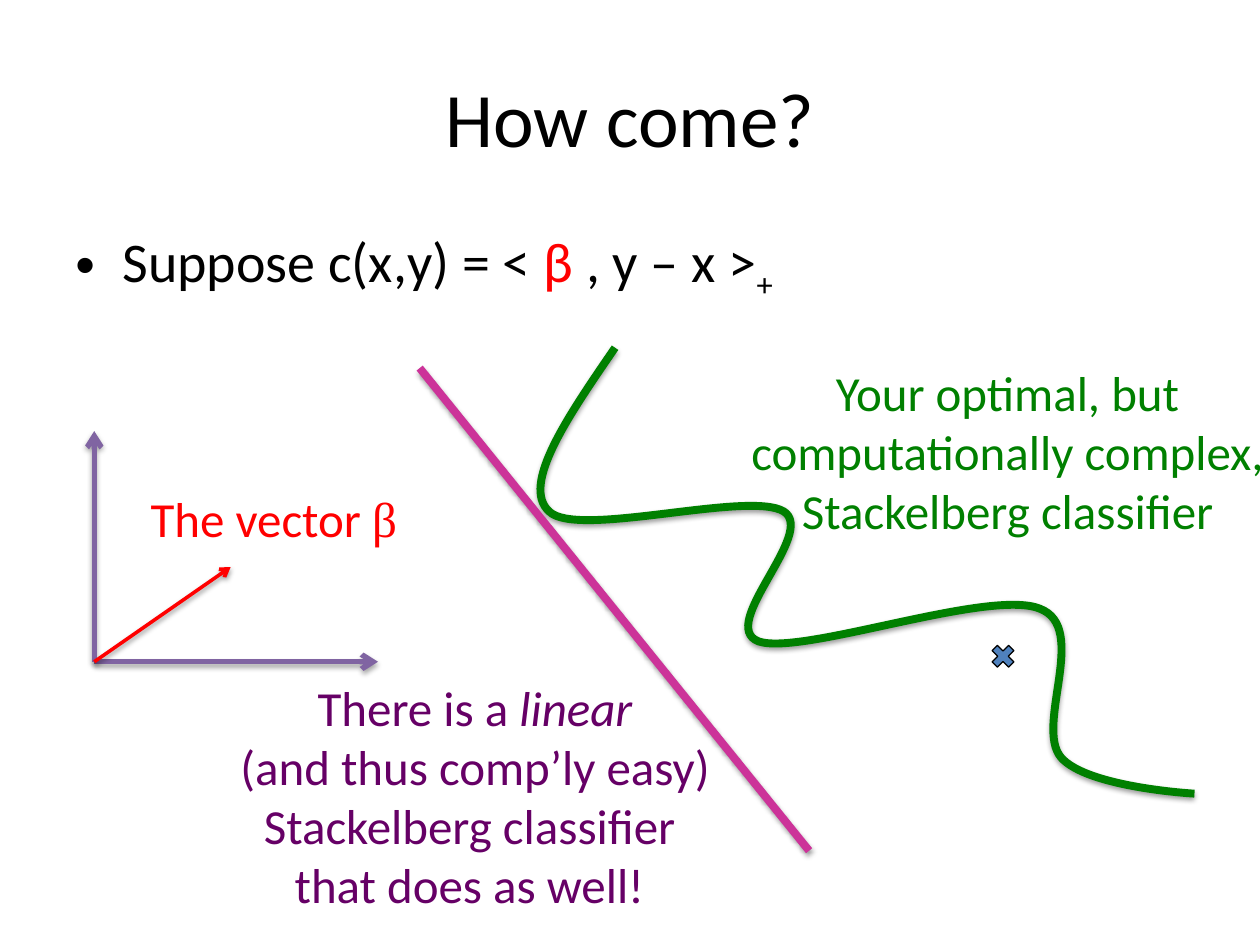
import lxml.etree
import pptx
import pptx.dml.color
import pptx.enum.shapes
import pptx.enum.text
import pptx.oxml
import pptx.oxml.ns
import pptx.util

Cm, Pt = pptx.util.Cm, pptx.util.Pt
qn = pptx.oxml.ns.qn
ALIGN = pptx.enum.text.PP_ALIGN
ANCHOR = pptx.enum.text.MSO_ANCHOR

COLORS = {"black": "000000", "red": "FF0000", "green": "008000", "axis": "8064A2",
          "pink": "CC3399", "purple": "660066", "blue": "4F81BD"}

# Content: a text is a list of paragraphs, a paragraph a list of (text, changes)
TITLE = [[("How come?", {})]]
COST = [[("Suppose c(x,y) = < ", {}), ("β", {"color": "red"}), (" , y – x >", {}),
         ("+", {"baseline": -25})]]

# Captions: left, top, width, height in cm, colour, paragraphs
CAPTIONS = [
    (2.74, 9.73, 5.56, 1.45, "red",
     [[("The vector ", {}), ("β", {"font": "Times New Roman"})]]),
    (14.81, 7.19, 11, 3.84, "green",
     [[("Your optimal, but", {})], [("computationally complex,", {})],
      [("Stackelberg classifier", {})]]),
    (4.52, 13.54, 10.11, 5.05, "purple",
     [[("There is a ", {}), ("linear", {"italic": True})],
      [("(and thus comp’ly easy)", {})],
      [("Stackelberg classifier ", {})], [("that does as well! ", {})]]),
]

# Lines: start, end in cm, colour, width in points, arrowhead, shadow
AXIS_SHADOW = {"opacity": 35, "distance": 1.8}
LINE_SHADOW = {"opacity": 38, "distance": 1.6}
ORIGIN = (1.9, 13.34)
LINES = [
    (ORIGIN, (7.62, 13.34), "axis", 3, True, AXIS_SHADOW),
    (ORIGIN, (1.9, 8.69), "axis", 3, True, AXIS_SHADOW),
    (ORIGIN, (4.65, 11.43), "red", 2, True, LINE_SHADOW),
    ((8.46, 7.42), (16.31, 17.15), "pink", 4.5, False, LINE_SHADOW),
]

# Complex classifier: start, then two control points and an end per bend
CURVE_START = (12.4, 7.01)
CURVE_BENDS = [
    ((11.46, 8.38), (10.49, 9.78), (11.07, 10.31)),
    ((11.63, 10.87), (15.09, 9.88), (15.8, 10.31)),
    ((16.48, 10.74), (14.45, 12.6), (15.29, 12.93)),
    ((16.15, 13.23), (19.94, 11.86), (20.96, 12.27)),
    ((21.97, 12.65), (20.85, 14.63), (21.39, 15.27)),
    ((21.92, 15.88), (24.08, 16), (24.08, 16)),
]


def rgb(name):
    return pptx.dml.color.RGBColor.from_string(COLORS[name])


def write(frame, paragraphs, size, color, align):
    for index, runs in enumerate(paragraphs):
        paragraph = frame.add_paragraph() if index else frame.paragraphs[0]
        paragraph.alignment = align
        for text, changes in runs:
            run = paragraph.add_run()
            run.text = text
            run.font.size = Pt(size)
            run.font.name = changes.get("font", "Calibri")
            run.font.color.rgb = rgb(changes.get("color", color))
            if "italic" in changes:
                run.font.italic = changes["italic"]
            if "baseline" in changes:
                run.font._element.set("baseline", str(changes["baseline"] * 1000))


def add_shadow(shape, opacity, distance):
    effects = lxml.etree.SubElement(shape._element.spPr, qn("a:effectLst"))
    shadow = lxml.etree.SubElement(effects, qn("a:outerShdw"), blurRad=str(Pt(3.1)),
                                   dist=str(Pt(distance)), dir="5400000", rotWithShape="0")
    shade = lxml.etree.SubElement(shadow, qn("a:srgbClr"), val=COLORS["black"])
    lxml.etree.SubElement(shade, qn("a:alpha"), val=str(opacity * 1000))


def stroke(shape, color, width):
    shape.line.color.rgb = rgb(color)
    shape.line.width = Pt(width)


def add_line(start, end, color, width, arrow, shadow):
    line = slide.shapes.add_connector(pptx.enum.shapes.MSO_CONNECTOR.STRAIGHT,
                                      *map(Cm, start + end))
    stroke(line, color, width)
    if arrow:
        lxml.etree.SubElement(line.line._get_or_add_ln(), qn("a:tailEnd"), type="arrow")
    add_shadow(line, **shadow)


def add_curve(start, bends):
    builder = slide.shapes.build_freeform(*map(Cm, start))
    builder.add_line_segments([tuple(map(Cm, bend[-1])) for bend in bends], close=False)
    curve = builder.convert_to_shape()
    # Turn each straight segment into a cubic one
    for segment, bend in zip(list(curve._element.iter(qn("a:lnTo"))), bends):
        segment.tag = qn("a:cubicBezTo")
        for position, (x, y) in enumerate(bend[:2]):
            control = segment.makeelement(qn("a:pt"), {"x": str(Cm(x) - curve.left),
                                                       "y": str(Cm(y) - curve.top)})
            segment.insert(position, control)
    curve.fill.background()
    stroke(curve, "green", 4.5)
    add_shadow(curve, **LINE_SHADOW)


presentation = pptx.Presentation()
presentation.slide_width, presentation.slide_height = Cm(25.4), Cm(19.05)
slide = presentation.slides.add_slide(presentation.slide_layouts[5])

# Title
title = slide.shapes.title
title.left, title.top, title.width, title.height = map(Cm, (1.27, 0.76, 22.86, 3.18))
title.text_frame.vertical_anchor = ANCHOR.MIDDLE
write(title.text_frame, TITLE, 44, "black", ALIGN.CENTER)

# Bulleted cost function
cost = slide.shapes.add_textbox(*map(Cm, (1.27, 4.45, 22.86, 12.57))).text_frame
cost.word_wrap = True
write(cost, COST, 32, "black", ALIGN.LEFT)
bullet = cost.paragraphs[0]._p.get_or_add_pPr()
bullet.set("marL", str(Cm(0.95)))
bullet.set("indent", str(-Cm(0.95)))
lxml.etree.SubElement(bullet, qn("a:buFont"), typeface="Arial")
lxml.etree.SubElement(bullet, qn("a:buChar"), char="•")

# Classifiers, axes and vector
add_curve(CURVE_START, CURVE_BENDS)
for line in LINES:
    add_line(*line)

# Captions
for left, top, width, height, color, paragraphs in CAPTIONS:
    caption = slide.shapes.add_textbox(*map(Cm, (left, top, width, height))).text_frame
    caption.word_wrap = False
    caption.auto_size = pptx.enum.text.MSO_AUTO_SIZE.SHAPE_TO_FIT_TEXT
    write(caption, paragraphs, 28, color, ALIGN.CENTER)

# Data point
point = slide.shapes.add_shape(pptx.enum.shapes.MSO_SHAPE.MATH_MULTIPLY,
                               *map(Cm, (19.9, 12.91, 0.64, 0.64)))
point.shadow.inherit = False
point.fill.solid()
point.fill.fore_color.rgb = rgb("blue")
stroke(point, "black", 0.75)

presentation.save("out.pptx")
